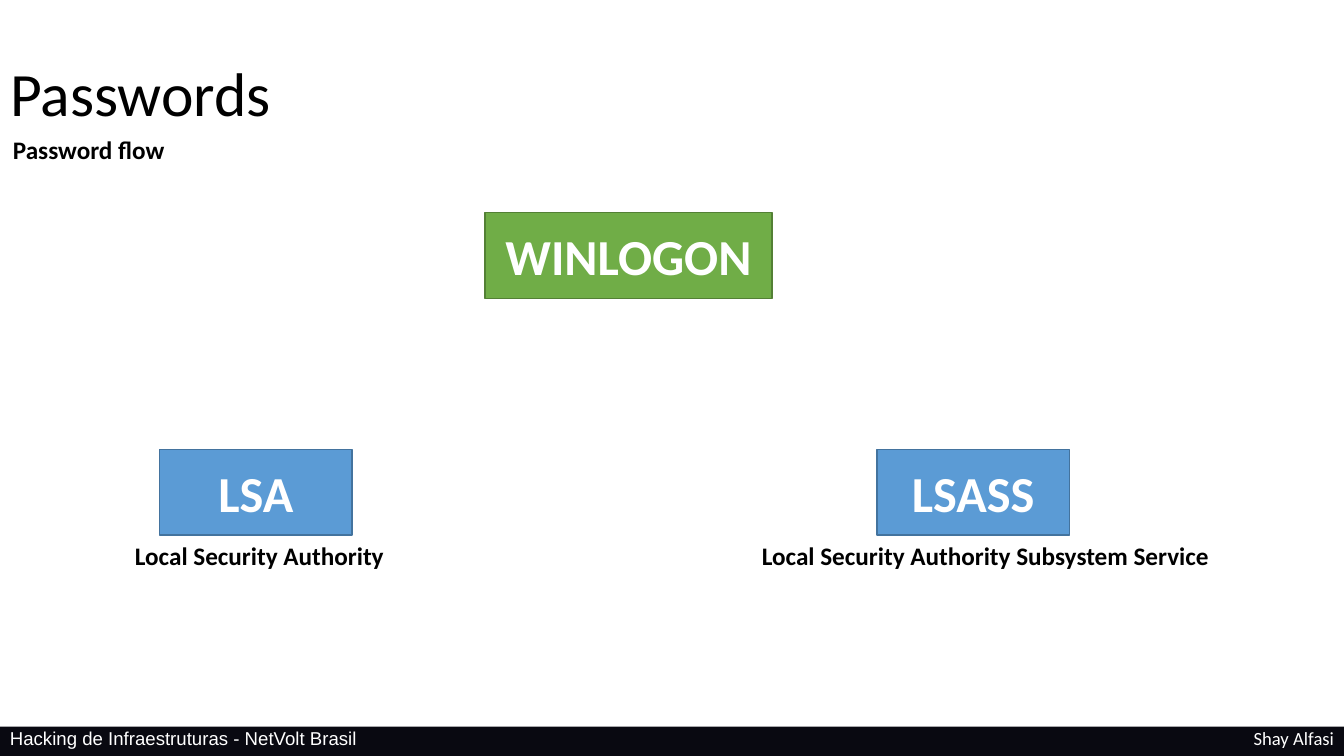
"""Builds the password flow slide."""
from dataclasses import dataclass

from pptx import Presentation
from pptx.dml.color import RGBColor as Rgb
from pptx.enum.shapes import MSO_SHAPE as Shape
from pptx.enum.text import MSO_ANCHOR as Anchor, PP_ALIGN as Align
from pptx.util import Pt

TITLE = "Passwords"
SUBTITLE = "Password flow"
LOGON = "WINLOGON"
SERVICES = [
    {"name": "LSA", "left": 114, "caption": "Local Security Authority",
     "caption_left": 89.3, "caption_width": 198},
    {"name": "LSASS", "left": 626.4, "caption": "Local Security Authority Subsystem Service",
     "caption_left": 537.1, "caption_width": 336},
]
COURSE = "Hacking de Infraestruturas - NetVolt Brasil"
AUTHOR = "Shay Alfasi"


@dataclass(frozen=True)
class Theme:
    font: str = "Calibri"
    course_font: str = "Arial"
    ink: str = "000000"
    light: str = "FFFFFF"
    bar: str = "090911"
    logon: tuple = ("70AD47", "538035")
    service: tuple = ("5B9BD5", "43739E")
    title_size: float = 44
    box_size: float = 36
    label_size: float = 18
    footer_size: float = 13.3


THEME = Theme()
WIDTH, HEIGHT = 960, 540
BAR_HEIGHT, FOOTER_HEIGHT = 21, 24
BOX_HEIGHT, LABEL_HEIGHT = 61.2, 29
LOGON_TOP, SERVICE_TOP = 152, 321.1
LOGON_WIDTH, SERVICE_WIDTH = 205.2, 137.5


def write(part, text, size, color=THEME.ink, bold=False, align=Align.LEFT,
          anchor=Anchor.TOP, font=THEME.font, wrap=True):
    frame = part.text_frame
    frame.word_wrap = wrap
    frame.vertical_anchor = anchor
    paragraph = frame.paragraphs[0]
    paragraph.alignment = align
    run = paragraph.add_run()
    run.text = text
    run.font.name, run.font.size, run.font.bold = font, Pt(size), bold
    run.font.color.rgb = Rgb.from_string(color)
    return paragraph


def add_box(slide, area, fill, line=None):
    box = slide.shapes.add_shape(Shape.RECTANGLE, *map(Pt, area))
    box.shadow.inherit = False
    box.fill.solid()
    box.fill.fore_color.rgb = Rgb.from_string(fill)
    if line:
        box.line.color.rgb = Rgb.from_string(line)
        box.line.width = Pt(1)
    else:
        box.line.fill.background()
    return box


def add_process(slide, name, area, colors):
    box = add_box(slide, area, *colors)
    write(box, name, THEME.box_size, THEME.light, True, Align.CENTER, Anchor.MIDDLE)


def add_label(slide, area, text, size, **style):
    write(slide.shapes.add_textbox(*map(Pt, area)), text, size, **style)


def place(holder, area):
    holder.left, holder.top, holder.width, holder.height = map(Pt, area)


def main():
    deck = Presentation()
    deck.slide_width, deck.slide_height = Pt(WIDTH), Pt(HEIGHT)
    slide = deck.slides.add_slide(deck.slide_layouts[0])

    add_box(slide, (0, HEIGHT - BAR_HEIGHT, WIDTH, BAR_HEIGHT), THEME.bar)
    footer_top = HEIGHT - FOOTER_HEIGHT
    add_label(slide, (0, footer_top, 601, FOOTER_HEIGHT), COURSE, THEME.footer_size,
              color=THEME.light, font=THEME.course_font)
    add_label(slide, (499, footer_top, WIDTH - 499, FOOTER_HEIGHT), AUTHOR,
              THEME.footer_size, color=THEME.light, align=Align.RIGHT)

    title, subtitle = slide.placeholders
    place(title, (0, 34, 805, 70.5))
    heading = write(title, TITLE, THEME.title_size, anchor=Anchor.MIDDLE)
    heading.line_spacing = 0.9
    place(subtitle, (2, 92.2, 344, LABEL_HEIGHT))
    write(subtitle, SUBTITLE, THEME.label_size, bold=True).space_before = Pt(0)

    add_process(slide, LOGON, (346.3, LOGON_TOP, LOGON_WIDTH, BOX_HEIGHT), THEME.logon)
    for service in SERVICES:
        add_process(slide, service["name"],
                    (service["left"], SERVICE_TOP, SERVICE_WIDTH, BOX_HEIGHT), THEME.service)
        add_label(slide, (service["caption_left"], SERVICE_TOP + BOX_HEIGHT,
                          service["caption_width"], LABEL_HEIGHT),
                  service["caption"], THEME.label_size, bold=True, wrap=False)

    deck.save("out.pptx")


if __name__ == "__main__":
    main()
